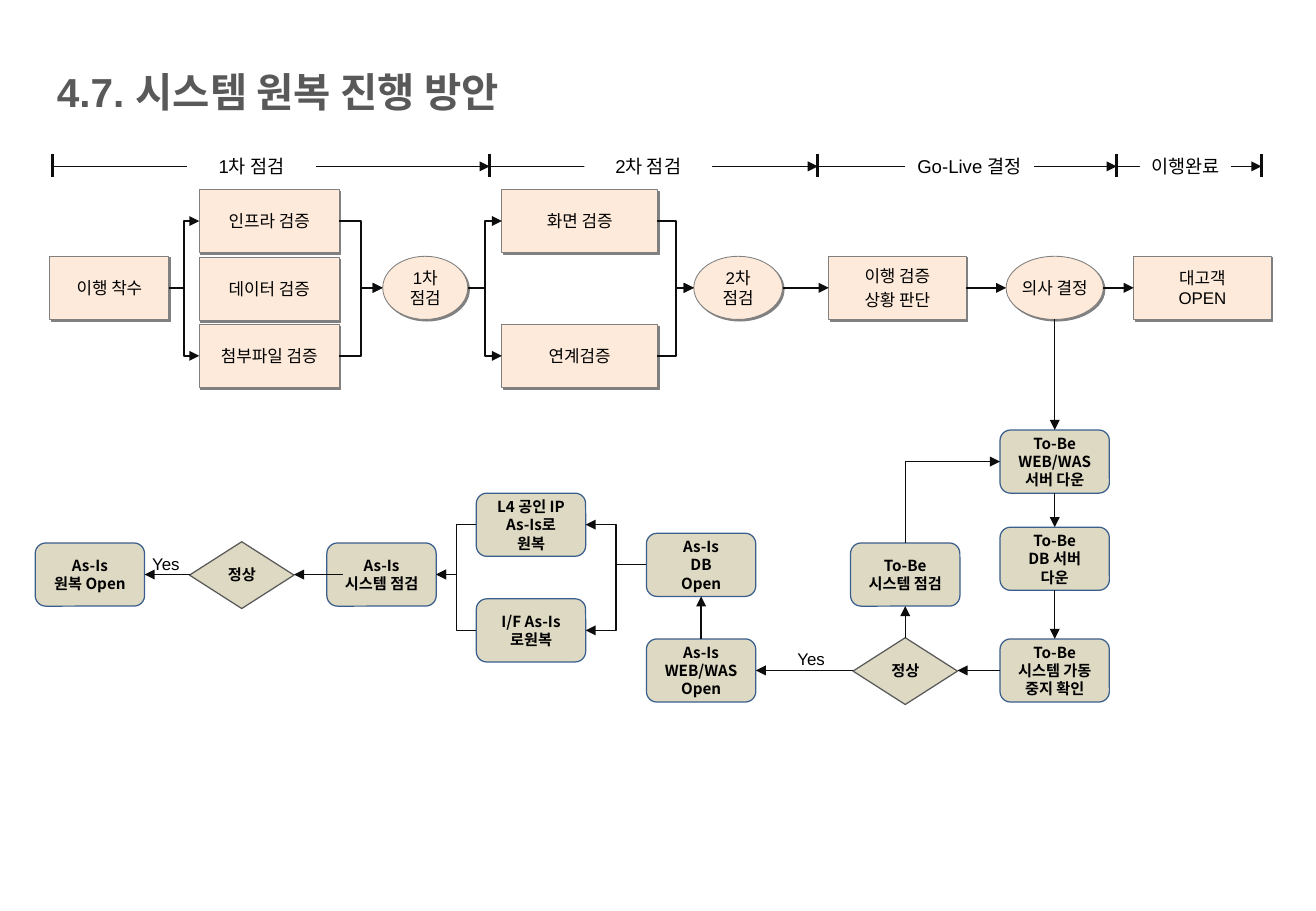
from dataclasses import dataclass, replace
from itertools import pairwise

from lxml.etree import SubElement
from pptx import Presentation
from pptx.dml.color import RGBColor
from pptx.enum.shapes import MSO_CONNECTOR, MSO_SHAPE
from pptx.enum.text import MSO_ANCHOR, PP_ALIGN
from pptx.oxml.ns import qn
from pptx.util import Emu, Pt

SCALE = 9144  # EMU in one px: 100 px to the inch


@dataclass(frozen=True)
class Theme:
    ink: str = "0D0D0D"
    black: str = "000000"
    grey: str = "595959"
    edge: str = "808080"
    blue: str = "3A5F8C"
    white: str = "FFFFFF"
    peach: str = "FDEADA"
    sand: str = "DDD9C3"
    latin: str = "Arial"
    hangul: str = "Noto Sans CJK KR"
    title: int = 24
    phase: int = 11
    step: int = 10
    task: int = 9


THEME = Theme()


@dataclass(frozen=True)
class Style:
    size: int
    form: MSO_SHAPE = MSO_SHAPE.RECTANGLE
    fill: str | None = None
    edge: str | None = None
    width: float = 0
    font: str = THEME.latin
    color: str = THEME.black
    bold: bool = False
    inset: tuple[int, int] = (0, 0)
    wrap: bool = True
    align: PP_ALIGN = PP_ALIGN.CENTER
    anchor: MSO_ANCHOR = MSO_ANCHOR.MIDDLE
    pitch: float | None = None
    gap: float = 0
    shadow: bool = False


TITLE = Style(THEME.title, color=THEME.grey, bold=True, inset=(10, 5), align=PP_ALIGN.LEFT)
PHASE = Style(THEME.phase, fill=THEME.white)
NOTE = Style(THEME.step, inset=(4, 4), anchor=MSO_ANCHOR.TOP)
STEP = Style(THEME.step, fill=THEME.peach, edge=THEME.edge, width=0.5,
             inset=(2, 5), wrap=False, shadow=True)
STATE = replace(STEP, font=THEME.hangul, gap=2)
OVAL = replace(STEP, form=MSO_SHAPE.OVAL)
TASK = Style(THEME.task, MSO_SHAPE.ROUNDED_RECTANGLE, THEME.sand, THEME.blue,
             font=THEME.hangul, bold=True, inset=(10, 5))
TEST = Style(THEME.task, MSO_SHAPE.FLOWCHART_DECISION, THEME.sand, THEME.grey, 0.75,
             bold=True, wrap=False, pitch=0.9)


@dataclass(frozen=True)
class Box:
    text: str
    style: Style
    x: int
    y: int
    w: int = 90
    h: int = 52

    def site(self, side: str) -> tuple[int, int]:
        """Middle of the left, right, top or bottom side (l, r, t, b)."""
        mid_x, mid_y = self.x + self.w // 2, self.y + self.h // 2
        return {"l": (self.x, mid_y), "r": (self.x + self.w, mid_y),
                "t": (mid_x, self.y), "b": (mid_x, self.y + self.h)}[side]


@dataclass(frozen=True)
class Link:
    start: str
    end: str
    sides: str = "rl"
    width: float = 0.75
    shift: int = 0


TICKS = (43, 403, 673, 919, 1038)
AXIS = 137
LABELS = [
    Box("1차 점검", PHASE, 154, 123, 106, 28),
    Box("2차 점검", PHASE, 481, 123, 105, 28),
    Box("Go-Live 결정", PHASE, 745, 123, 106, 28),
    Box("이행완료", PHASE, 938, 123, 75, 28),
    Box("4.7. 시스템 원복 진행 방안", TITLE, 37, 50, 931, 50),
    Box("Yes", NOTE, 630, 530, 75, 25),
    Box("Yes", NOTE, 99, 452, 75, 25),
]
HIGH, MID, LOW = 156, 211, 267
NODES = {
    "begin": Box("이행 착수", STEP, 41, MID, 98),
    "infra": Box("인프라 검증", STEP, 164, HIGH, 115),
    "data": Box("데이터 검증", STEP, 164, MID + 1, 115),
    "files": Box("첨부파일 검증", STEP, 164, LOW, 115),
    "first": Box("1차\v점검", OVAL, 315, MID, 70),
    "screen": Box("화면 검증", STEP, 413, HIGH, 128),
    "linkage": Box("연계검증", STEP, 413, LOW, 128),
    "second": Box("2차\v점검", OVAL, 571, MID, 73),
    "judge": Box("이행 검증\n상황 판단", STATE, 682, MID, 113),
    "decide": Box("의사 결정", OVAL, 828, MID, 80),
    "launch": Box("대고객\vOPEN", STEP, 933, MID, 113),
    "web down": Box("To-Be WEB/WAS 서버 다운", TASK, 823, 354),
    "db down": Box("To-Be\nDB 서버\n다운", TASK, 823, 434),
    "stopped": Box("To-Be 시스템 가동 중지 확인", TASK, 823, 526),
    "stop test": Box("정상", TEST, 702, 525, 86, 55),
    "new check": Box("To-Be\n시스템 점검", TASK, 700, 447),
    "web open": Box("As-Is\nWEB/WAS\nOpen", TASK, 532, 526),
    "db open": Box("As-Is\nDB\nOpen", TASK, 532, 439),
    "switch": Box("L4 공인 IP\nAs-Is로 원복", TASK, 392, 406),
    "interface": Box("I/F As-Is로원복", TASK, 392, 493),
    "old check": Box("As-Is\n시스템 점검", TASK, 269, 447),
    "last test": Box("정상", TEST, 156, 446, 86, 55),
    "restored": Box("As-Is\n원복 Open", TASK, 29, 447),
}
FLOW = [("begin", "infra"), ("begin", "files"), ("infra", "first"), ("files", "first"),
        ("first", "screen"), ("first", "linkage"), ("screen", "second"),
        ("linkage", "second"), ("second", "judge"), ("judge", "decide"),
        ("decide", "launch")]
LINKS = [Link(start, end, width=1.25) for start, end in FLOW] + [
    Link("decide", "web down", "bt"),
    Link("web down", "db down", "bt"),
    Link("db down", "stopped", "bt"),
    Link("stopped", "stop test", "lr"),
    Link("stop test", "new check", "tb"),
    Link("new check", "web down", "tl"),
    Link("stop test", "web open", "lr"),
    Link("web open", "db open", "tb"),
    Link("db open", "switch", "lr"),
    Link("db open", "interface", "lr"),
    Link("switch", "old check", "lr"),
    Link("interface", "old check", "lr"),
    Link("old check", "last test", "lr", shift=13),
    Link("last test", "restored", "lr"),
]


def px(*values: int) -> list[Emu]:
    return [Emu(value * SCALE) for value in values]


def rgb(color: str) -> RGBColor:
    return RGBColor.from_string(color)


def add_shadow(shape) -> None:
    effects = shape.element.spPr.find(qn("a:effectLst"))
    outer = SubElement(effects, qn("a:outerShdw"), blurRad="0", dist=str(Pt(1.4)),
                       dir="2700000", algn="ctr", rotWithShape="0")
    SubElement(outer, qn("a:srgbClr"), val=THEME.edge)


def set_text(shape, text: str, style: Style) -> None:
    frame = shape.text_frame
    frame.text = text
    frame.word_wrap = style.wrap
    frame.vertical_anchor = style.anchor
    side, top = px(*style.inset)
    frame.margin_left = frame.margin_right = side
    frame.margin_top = frame.margin_bottom = top
    for index, para in enumerate(frame.paragraphs):
        para.alignment = style.align
        if style.pitch:
            para.line_spacing = style.pitch
        if index and style.gap:
            para.space_before = Pt(style.gap)
        for run in para.runs:
            font = run.font
            font.name, font.size, font.bold = style.font, Pt(style.size), style.bold
            font.color.rgb = rgb(style.color)
            SubElement(font._element, qn("a:ea"), typeface=THEME.hangul)
    for split in shape.element.iter(qn("a:br")):
        SubElement(split, qn("a:rPr"), sz=str(style.size * 100))


def add_box(shapes, box: Box) -> None:
    style, place = box.style, px(box.x, box.y, box.w, box.h)
    if style.fill is None:
        shape = shapes.add_textbox(*place)
    else:
        shape = shapes.add_shape(style.form, *place)
        shape.shadow.inherit = False
        shape.fill.solid()
        shape.fill.fore_color.rgb = rgb(style.fill)
        if style.edge:
            shape.line.color.rgb = rgb(style.edge)
            shape.line.width = Pt(style.width)
        else:
            shape.line.fill.background()
    if style.shadow:
        add_shadow(shape)
    set_text(shape, box.text, style)


def add_line(shapes, start: tuple[int, int], end: tuple[int, int], width: float,
             arrow: str = "tailEnd", corner: bool = False) -> None:
    """Draw a straight line, or an elbow if both coordinates differ."""
    bent = start[0] != end[0] and start[1] != end[1]
    kind = MSO_CONNECTOR.ELBOW if bent else MSO_CONNECTOR.STRAIGHT
    line = shapes.add_connector(kind, *px(*start, *end))
    line.line.color.rgb = rgb(THEME.ink)
    line.line.width = Pt(width)
    props = line.element.spPr
    if corner:
        props.find(qn("a:prstGeom")).set("prst", "bentConnector2")
    if arrow:
        SubElement(props.find(qn("a:ln")), qn(f"a:{arrow}"), type="triangle")
    SubElement(props, qn("a:effectLst"))


def add_link(shapes, link: Link) -> None:
    x, y = NODES[link.start].site(link.sides[0])
    start, end = (x + link.shift, y), NODES[link.end].site(link.sides[1])
    if link.sides == "tl":  # a one-corner elbow runs sideways first
        add_line(shapes, end, start, link.width, "headEnd", corner=True)
    else:
        add_line(shapes, start, end, link.width)


def main() -> None:
    deck = Presentation()
    deck.slide_width, deck.slide_height = px(1083, 750)
    shapes = deck.slides.add_slide(deck.slide_layouts[6]).shapes
    for x in TICKS:
        add_line(shapes, (x, 127), (x, 146), 2, arrow="")
    for left, right in pairwise(TICKS):
        add_line(shapes, (left, AXIS), (right, AXIS), 0.75)
    for box in [*LABELS, *NODES.values()]:
        add_box(shapes, box)
    for link in LINKS:
        add_link(shapes, link)
    deck.save("out.pptx")


if __name__ == "__main__":
    main()
